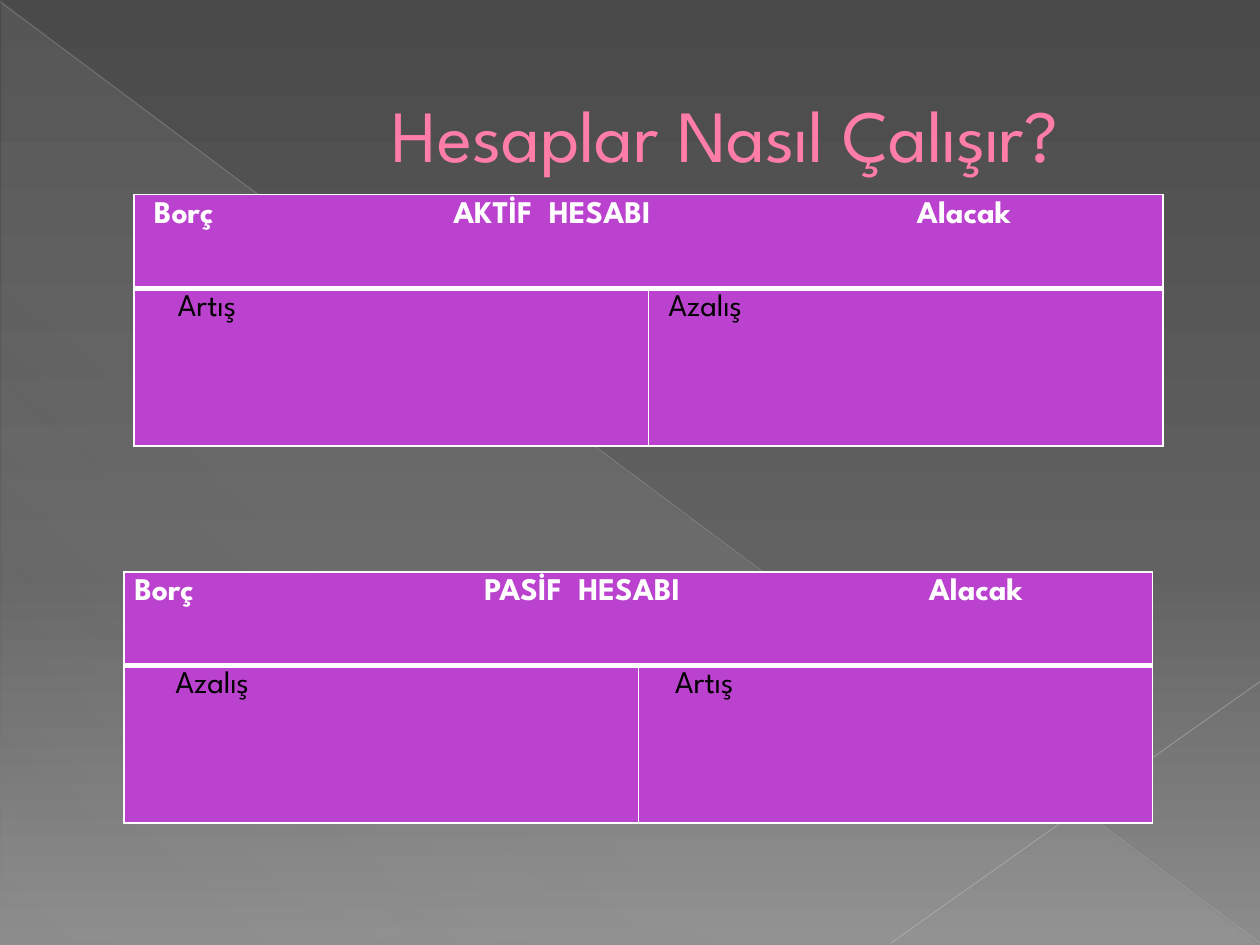
from dataclasses import dataclass

from lxml import etree
from pptx import Presentation
from pptx.dml.color import RGBColor
from pptx.enum.shapes import MSO_CONNECTOR, MSO_SHAPE
from pptx.enum.text import MSO_ANCHOR
from pptx.oxml import parse_xml
from pptx.oxml.ns import qn
from pptx.util import Pt

LINE = MSO_CONNECTOR.STRAIGHT
RIGHT_TRIANGLE = MSO_SHAPE.RIGHT_TRIANGLE
MIDDLE = MSO_ANCHOR.MIDDLE
NS_A = "http://schemas.openxmlformats.org/drawingml/2006/main"


@dataclass(frozen=True)
class Theme:
    font: str = "League Spartan"
    title: str = "FF7DA7"
    title_edge: str = "B12761"
    cell: str = "BA42CE"
    white: str = "FFFFFF"
    black: str = "000000"
    title_size: int = 42
    body_size: int = 18
    # Gradient stops: position %, colour, opacity %
    backdrop: tuple = ((0, "4A4A4A", 100), (60, "626262", 100), (100, "8C8C8C", 100))
    sheen: tuple = ((0, "D2D2D2", 10), (70, "D2D2D2", 8), (100, "D2D2D2", 1))


T = Theme()


def color_xml(color, alpha=100):
    return f'<a:srgbClr val="{color}"><a:alpha val="{alpha * 1000}"/></a:srgbClr>'


def set_gradient(props, stops, angle):
    """Replace the solid fill of a properties element by a gradient."""
    gs = "".join(f'<a:gs pos="{pos * 1000}">{color_xml(c, a)}</a:gs>' for pos, c, a in stops)
    grad = parse_xml(f'<a:gradFill xmlns:a="{NS_A}" rotWithShape="1"><a:gsLst>{gs}</a:gsLst>'
                     f'<a:lin ang="{angle * 60000}" scaled="0"/></a:gradFill>')
    props.replace(props.find(qn("a:solidFill")), grad)


def write(tf, text, size=T.body_size, color=T.black, bold=False, tabs=()):
    p = tf.paragraphs[0]
    r = p.add_run()
    r.text = text
    r.font.name = T.font
    r.font.size = Pt(size)
    r.font.bold = bold
    r.font.color.rgb = RGBColor.from_string(color)
    if tabs:
        tab_list = etree.SubElement(p._p.get_or_add_pPr(), qn("a:tabLst"))
        for pos in tabs:
            etree.SubElement(tab_list, qn("a:tab"), pos=str(Pt(pos)), algn="l")
    return r


def add_hairline(slide, start, end, color, width, alpha):
    ln = slide.shapes.add_connector(LINE, *map(Pt, start + end))
    ln.line.width = Pt(width)
    ln.line.color.rgb = RGBColor.from_string(color)
    clr = ln._element.spPr.find(".//" + qn("a:srgbClr"))
    etree.SubElement(clr, qn("a:alpha"), val=str(alpha * 1000))
    etree.SubElement(ln._element.spPr, qn("a:effectLst"))


def add_backdrop(slide, x, y, w, h):
    slide.background.fill.solid()
    set_gradient(slide.element.find(".//" + qn("p:bgPr")), T.backdrop, 90)
    # Pale triangle below the diagonal
    sp = slide.shapes.add_shape(RIGHT_TRIANGLE, Pt(x + 1), Pt(y + 1), Pt(w - 2), Pt(h - 1))
    sp.shadow.inherit = False
    sp.line.fill.background()
    sp.fill.solid()
    set_gradient(sp._element.spPr, T.sheen, 133)
    # Crossing hairlines
    add_hairline(slide, (x, y + 1), (x + w, y + h - 1), "BFBFBF", 0.39, 35)
    add_hairline(slide, (x + w, y + 389.5), (x + 509, y + h - 1), "C6C6C6", 0.47, 45)


def add_title(slide, x, y, w, h, text, indent):
    tf = slide.shapes.add_textbox(Pt(x), Pt(y), Pt(w), Pt(h)).text_frame
    tf.word_wrap = True
    tf.vertical_anchor = MIDDLE
    tf.margin_left = Pt(indent)
    r = write(tf, text, size=T.title_size, color=T.title)
    r.font._element.insert(0, parse_xml(
        f'<a:ln xmlns:a="{NS_A}" w="{Pt(0.5)}"><a:solidFill>'
        f'{color_xml(T.title_edge)}</a:solidFill></a:ln>'))


def style_cell(cell, indent, top, bottom):
    tcPr = cell._tc.get_or_add_tcPr()
    for side, width in (("L", 1), ("R", 1), ("T", top), ("B", bottom)):
        tcPr.append(parse_xml(
            f'<a:ln{side} xmlns:a="{NS_A}" w="{Pt(width)}"><a:solidFill>'
            f'{color_xml(T.white)}</a:solidFill></a:ln{side}>'))
    cell.fill.solid()
    cell.fill.fore_color.rgb = RGBColor.from_string(T.cell)
    cell.margin_left = Pt(indent)


def add_account(slide, x, y, w, h, heads, head_indent, tabs, entries):
    """T-account: a merged heading row above a debit and a credit cell."""
    table = slide.shapes.add_table(2, 2, Pt(x), Pt(y), Pt(w), Pt(h)).table
    table.first_row = table.horz_banding = False
    head_h = 53.5
    table.rows[0].height, table.rows[1].height = Pt(head_h), Pt(h - head_h)

    # Heading
    head = table.cell(0, 0)
    head.merge(table.cell(0, 1))
    for col in range(2):
        style_cell(table.cell(0, col), head_indent, 1, 3)
    write(head.text_frame, "\t".join(heads), color=T.white, bold=True, tabs=tabs)

    # Debit and credit
    for col, (text, indent) in enumerate(entries):
        cell = table.cell(1, col)
        style_cell(cell, indent, 3, 1)
        write(cell.text_frame, text)


def main():
    prs = Presentation()
    prs.slide_width, prs.slide_height = Pt(720), Pt(540)
    slide = prs.slides.add_slide(prs.slide_layouts[6])

    add_backdrop(slide, 0, 0, 720, 540)
    add_title(slide, 36, 21, 648, 110, "Hesaplar Nasıl Çalışır?", indent=188)
    add_account(slide, 76.5, 111.25, 588, 143.5, ("Borç", "AKTİF  HESABI", "Alacak"),
                head_indent=11.5, tabs=(171, 436), entries=(("Artış", 25), ("Azalış", 11.5)))
    add_account(slide, 70.75, 326.75, 588, 143.5, ("Borç", "PASİF  HESABI", "Alacak"),
                head_indent=6, tabs=(200, 454), entries=(("Azalış", 29.5), ("Artış", 21)))

    prs.save("out.pptx")


if __name__ == "__main__":
    main()
